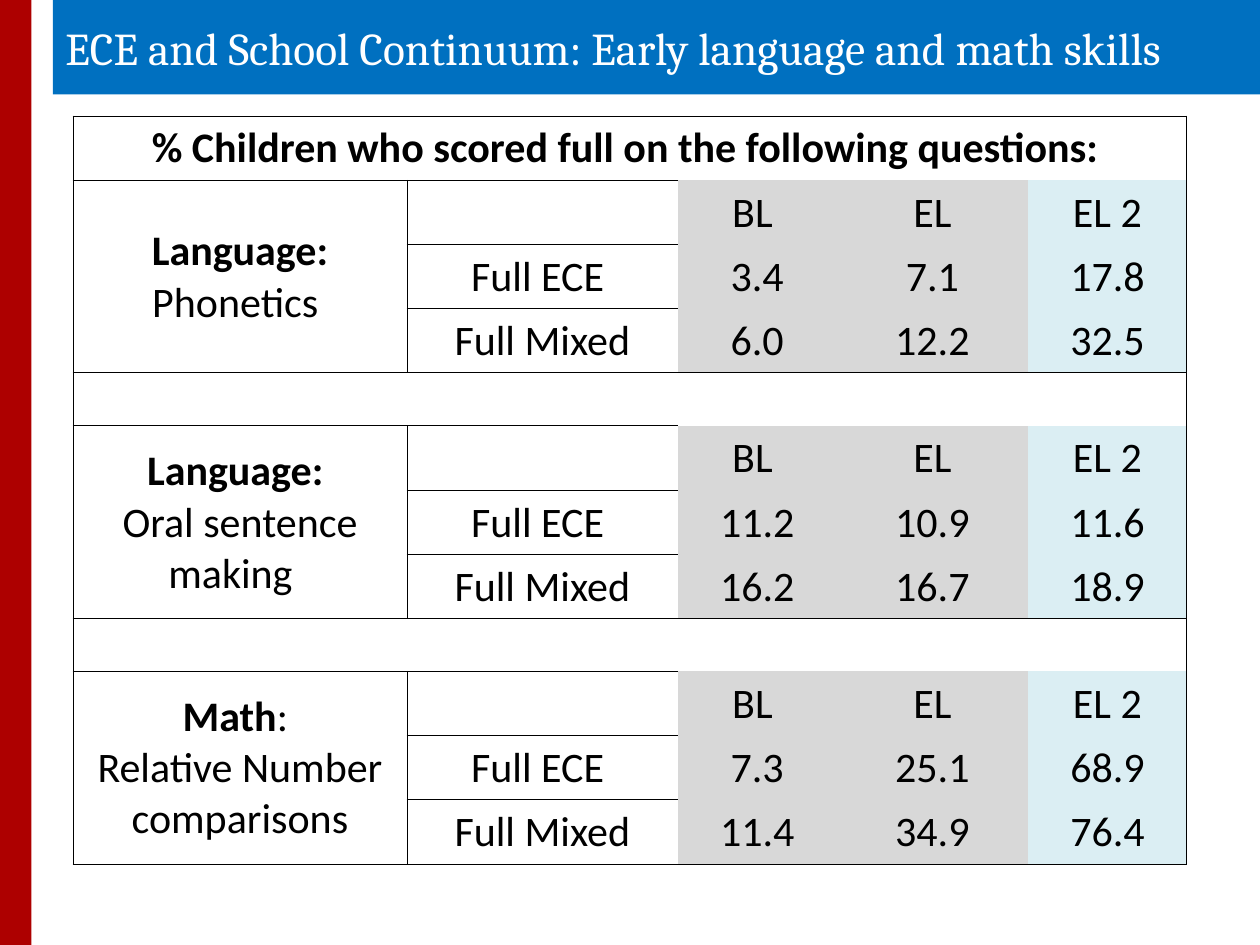
from lxml import etree
from pptx import Presentation
from pptx.dml.color import RGBColor
from pptx.enum.shapes import MSO_SHAPE
from pptx.enum.text import MSO_ANCHOR, PP_ALIGN
from pptx.oxml.ns import qn
from pptx.util import Inches, Pt

RECT = MSO_SHAPE.RECTANGLE
MIDDLE = MSO_ANCHOR.MIDDLE
LEFT, CENTER = PP_ALIGN.LEFT, PP_ALIGN.CENTER
NO_STYLE = "{2D5ABB26-0587-4C30-8999-92F81FD0307C}"
BLACK, WHITE, RED, BLUE = "000000", "FFFFFF", "AD0000", "0070C0"
GREY, PALE_BLUE = "D8D8D8", "DBEEF3"

COLUMN_WIDTHS = [2.65, 2.15, 1.26, 1.52, 1.26]
COLUMN_FILLS = [None, None, GREY, GREY, PALE_BLUE]
ROW_HEIGHT, GAP_HEIGHT = 0.51, 0.42
ROWS_PER_TOPIC = 3
HEADINGS = ["", "BL ", "EL", "EL 2"]
# Each topic: paragraphs of (text, bold) runs, then the two rows of results
TOPICS = [
    ([[("Language: ", True), ("Phonetics ", False)]],
     ["3.4", "7.1", "17.8"], ["6.0", "12.2", "32.5"]),
    ([[("Language: ", True)], [("Oral sentence making  ", False)]],
     ["11.2", "10.9", "11.6"], ["16.2", "16.7", "18.9"]),
    ([[("Math", True), (": ", False)], [("Relative Number comparisons", False)]],
     ["7.3", "25.1", "68.9"], ["11.4", "34.9", "76.4"]),
]


def write(frame, paragraphs, size=24, font="Calibri", color=BLACK, align=CENTER, before=0):
    """Fill a text frame with paragraphs, each a list of (text, bold) runs."""
    for number, runs in enumerate(paragraphs):
        paragraph = frame.add_paragraph() if number else frame.paragraphs[0]
        paragraph.alignment = align
        paragraph.space_before = Pt(before)
        for text, bold in runs:
            run = paragraph.add_run()
            run.text = text
            run.font.size, run.font.name, run.font.bold = Pt(size), font, bold
            run.font.color.rgb = RGBColor.from_string(color)


def format_cell(cell, edges, fill=None):
    """Draw black lines on the edges named by L, R, T and B, then set the fill."""
    properties = cell._tc.get_or_add_tcPr()
    for edge in "LRTB":
        line = etree.SubElement(properties, qn("a:ln" + edge), w=str(Pt(0.5)))
        if edge in edges:
            solid = etree.SubElement(line, qn("a:solidFill"))
            etree.SubElement(solid, qn("a:srgbClr"), val=BLACK)
        else:
            etree.SubElement(line, qn("a:noFill"))
    if fill:
        cell.fill.solid()
        cell.fill.fore_color.rgb = RGBColor.from_string(fill)
    else:
        cell.fill.background()
    cell.vertical_anchor = MIDDLE
    cell.margin_left = cell.margin_right = cell.margin_top = Inches(0.01)
    cell.margin_bottom = 0


prs = Presentation()
prs.slide_width, prs.slide_height = Inches(10), Inches(7.5)
slide = prs.slides.add_slide(prs.slide_layouts[6])

# Side stripe and title bar
bars = []
for left, width, height, color in [(0, 0.25, 7.5, RED), (0.42, 9.58, 0.75, BLUE)]:
    bar = slide.shapes.add_shape(RECT, Inches(left), 0, Inches(width), Inches(height))
    bar.shadow.inherit = False
    bar.fill.solid()
    bar.fill.fore_color.rgb = RGBColor.from_string(color)
    bar.line.fill.background()
    bars.append(bar)
title = bars[-1].text_frame
title.word_wrap = True
title.vertical_anchor = MIDDLE
write(title, [[("ECE and School Continuum: Early language and math skills", False)]],
      size=26, font="Cambria", color=WHITE, align=LEFT, before=5)

# Results table: a heading row, then a block per topic with a gap row between blocks
block = ROWS_PER_TOPIC + 1
row_count, last = block * len(TOPICS), len(COLUMN_WIDTHS) - 1
full_width_rows = range(0, row_count, block)
heights = [GAP_HEIGHT if row and row in full_width_rows else ROW_HEIGHT
           for row in range(row_count)]
table = slide.shapes.add_table(
    row_count, last + 1, Inches(0.58), Inches(0.92),
    Inches(sum(COLUMN_WIDTHS)), Inches(sum(heights))).table
table.first_row = table.horz_banding = False
table._tbl.tblPr.find(qn("a:tableStyleId")).text = NO_STYLE
for column, width in zip(table.columns, COLUMN_WIDTHS):
    column.width = Inches(width)
for row, height in zip(table.rows, heights):
    row.height = Inches(height)

for top in full_width_rows:
    for col in range(last + 1):
        format_cell(table.cell(top, col), {0: "LRTB", last: "RTB"}.get(col, "TB"))
    table.cell(top, 0).merge(table.cell(top, last))
write(table.cell(0, 0).text_frame,
      [[("% Children who scored full on the following questions: ", True)]])

for top, (topic, ece, mixed) in zip(full_width_rows, TOPICS):
    lines = [HEADINGS, ["Full ECE ", *ece], ["Full Mixed", *mixed]]
    for row, values in enumerate(lines, top + 1):
        format_cell(table.cell(row, 0), "LRTB" if row == top + 1 else "LR")
        for col, value in enumerate(values, 1):
            cell = table.cell(row, col)
            format_cell(cell, {1: "LTB", last: "R"}.get(col, ""), COLUMN_FILLS[col])
            if value:
                write(cell.text_frame, [[(value, False)]])
    label = table.cell(top + 1, 0)
    label.merge(table.cell(top + ROWS_PER_TOPIC, 0))
    write(label.text_frame, topic)

# Close the table along its bottom edge
for col in range(last + 1):
    edge = table.cell(row_count - 1, col)._tc.tcPr.find(qn("a:lnB"))
    edge.remove(edge[0])
    solid = etree.SubElement(edge, qn("a:solidFill"))
    etree.SubElement(solid, qn("a:srgbClr"), val=BLACK)

prs.save("out.pptx")
